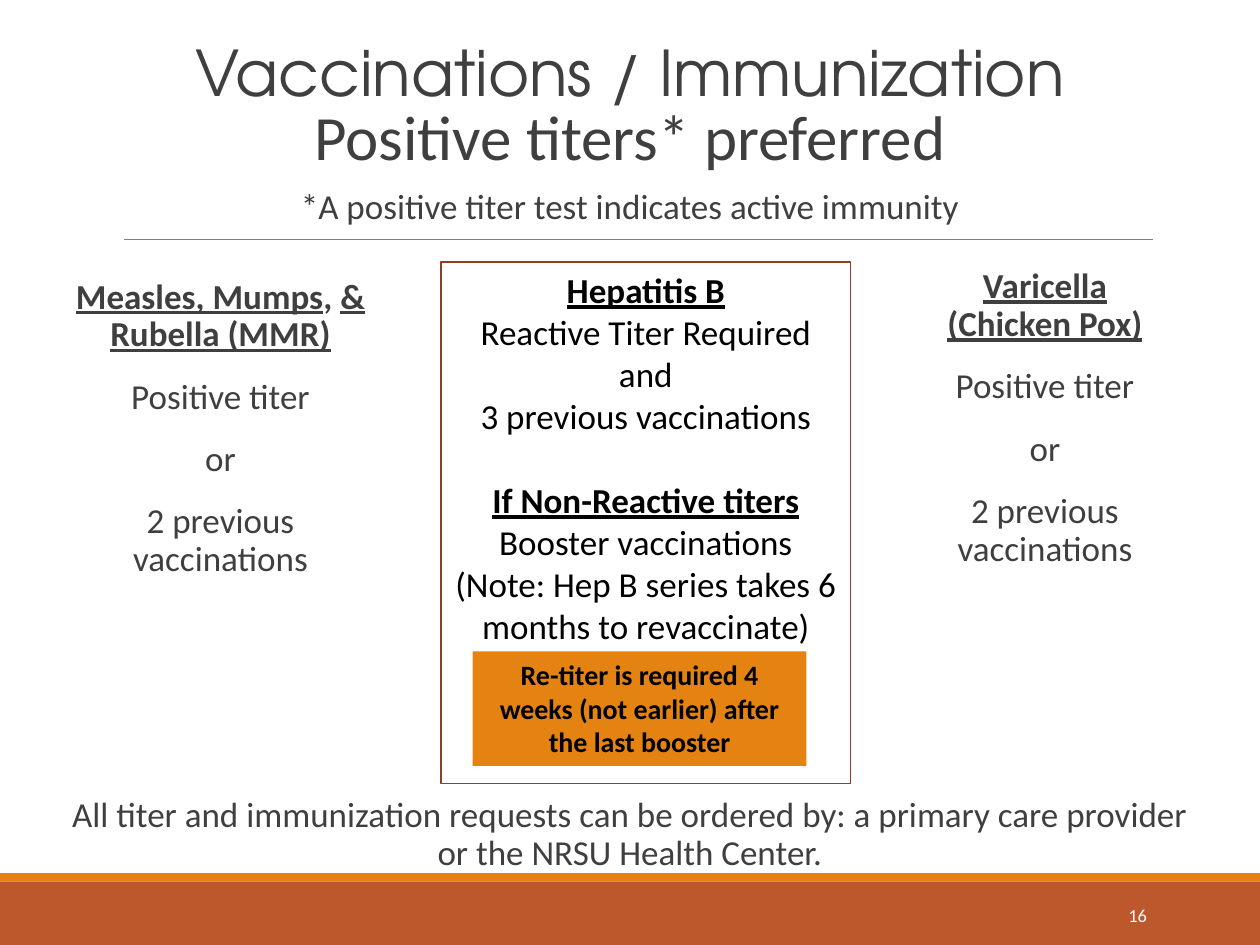
from copy import deepcopy

from lxml import etree
from pptx import Presentation
from pptx.dml.color import RGBColor
from pptx.enum import shapes, text
from pptx.oxml import ns
from pptx.util import Cm, Pt

INK = RGBColor(0x3F, 0x3F, 0x3F)
BLACK = RGBColor(0, 0, 0)
WHITE = RGBColor(0xFF, 0xFF, 0xFF)
RUST = RGBColor(0xBD, 0x58, 0x2C)
ORANGE = RGBColor(0xE4, 0x83, 0x12)
BROWN = RGBColor(0x8D, 0x41, 0x20)
GREY = RGBColor(0x7F, 0x7F, 0x7F)

HEADING = {"bold": True, "underline": True}
PLAIN_INSET, INDENT = 0.25, 0.3
SLIDE_WIDTH, SLIDE_HEIGHT = 25.4, 19.05


def place(shape, box):
    shape.left, shape.top, shape.width, shape.height = (Cm(v) for v in box)
    return shape


def add_run(paragraph, words, font="Calibri", size=20, color=INK,
            bold=False, underline=False):
    """Add words to the paragraph; a newline becomes a line break."""
    for number, line in enumerate(words.split("\n")):
        if number:
            paragraph.add_line_break()
            line_break = paragraph._p[-1]
        run = paragraph.add_run()
        run.text = line
        run.font.name, run.font.size = font, Pt(size)
        run.font.bold, run.font.underline = bold, underline
        run.font.color.rgb = color
        if number:
            line_break.append(deepcopy(run._r.rPr))


def write(shape, paragraphs, align=text.PP_ALIGN.CENTER, spacing=1.0, before=0,
          anchor=text.MSO_ANCHOR.TOP, inset=PLAIN_INSET, indent=0, **style):
    """Fill a shape; each paragraph is a list of (words, style changes)."""
    frame = shape.text_frame
    frame.word_wrap = True
    frame.auto_size = text.MSO_AUTO_SIZE.NONE
    frame.vertical_anchor = anchor
    frame.margin_left = frame.margin_right = Cm(inset)
    frame.margin_top = frame.margin_bottom = Cm(0.13)
    for number, runs in enumerate(paragraphs):
        paragraph = frame.add_paragraph() if number else frame.paragraphs[0]
        paragraph.alignment = align
        paragraph.line_spacing = spacing
        gap = before.get(number, 0) if isinstance(before, dict) else before
        paragraph.space_before = Pt(gap if number else 0)
        paragraph.space_after = Pt(0)
        properties = paragraph._p.get_or_add_pPr()
        properties.set("marL", str(Cm(indent)))
        properties.set("indent", "0")
        etree.SubElement(properties, ns.qn("a:buNone"))
        for words, changes in runs:
            add_run(paragraph, words, **{**style, **changes})


def add_box(slide, box, fill=None, line=None):
    shape = slide.shapes.add_shape(shapes.MSO_SHAPE.RECTANGLE,
                                   *(Cm(v) for v in box))
    shape.shadow.inherit = False
    if fill is None:
        shape.fill.background()
    else:
        shape.fill.solid()
        shape.fill.fore_color.rgb = fill
    if line is None:
        shape.line.fill.background()
    else:
        shape.line.color.rgb, shape.line.width = line, Pt(0.75)
    return shape


def add_note(slide, box, words, **style):
    note = slide.shapes.add_textbox(*(Cm(v) for v in box))
    write(note, [[(words, {})]], **style)


def add_footer(slide, box, number):
    left, top, width, height = box
    stripe = 0.17
    add_box(slide, (left, top + stripe, width, height - stripe), fill=RUST)
    add_box(slide, (left, top, width, stripe), fill=ORANGE)
    add_note(slide, (left + width - 4.77, top + 0.33, 2.74, 1.02), number,
             align=text.PP_ALIGN.RIGHT, anchor=text.MSO_ANCHOR.MIDDLE,
             size=10.5, color=WHITE)


def add_header(slide, box):
    left, top, width, height = box
    write(place(slide.shapes.title, (left + 0.3, top, 22.86, 3.02)),
          [[("Vaccinations / Immunization\n", {"font": "TeX Gyre Adventor"}),
            ("Positive titers* preferred", {})]],
          size=36, spacing=0.85, anchor=text.MSO_ANCHOR.BOTTOM)
    add_note(slide, (left, top + 3.15, width, 1),
             "*A positive titer test indicates active immunity",
             spacing=0.8, inset=0, indent=INDENT)
    bottom = Cm(top + height)
    rule = slide.shapes.add_connector(shapes.MSO_CONNECTOR.STRAIGHT,
                                      Cm(left + 1.52), bottom,
                                      Cm(left + width - 0.89), bottom)
    rule.line.color.rgb, rule.line.width = GREY, Pt(0.75)
    etree.SubElement(rule._element.spPr, ns.qn("a:effectLst"))


def fill_vaccine(placeholder, box, heading):
    """Set one vaccine column: heading, then the accepted proofs."""
    proofs = ["Positive titer", "or", "2 previous vaccinations"]
    write(place(placeholder, box), [heading] + [[(p, {})] for p in proofs],
          spacing=0.9, before=14, inset=0, indent=INDENT)


def add_hepatitis(slide, box):
    left, top, width, height = box
    lines = [("Hepatitis B", HEADING),
             ("Reactive Titer Required", {}),
             ("and", {}),
             ("3 previous vaccinations", {}),
             ("If Non-Reactive titers", HEADING),
             ("Booster vaccinations", {}),
             ("(Note: Hep B series takes 6 months to revaccinate)", {})]
    write(add_box(slide, box, line=BROWN), [[line] for line in lines],
          color=BLACK, before={4: 24})
    retiter = add_box(slide, (left + 0.64, top + 7.85, 6.73, 2.31), fill=ORANGE)
    write(retiter, [[("Re-titer is required 4 weeks (not earlier) "
                      "after the last booster", {})]],
          size=16, color=BLACK, bold=True)


def main():
    deck = Presentation()
    deck.slide_width, deck.slide_height = Cm(SLIDE_WIDTH), Cm(SLIDE_HEIGHT)
    slide = deck.slides.add_slide(deck.slide_layouts[3])
    measles, varicella = list(slide.placeholders)[1:3]

    add_footer(slide, (0, 17.6, SLIDE_WIDTH, SLIDE_HEIGHT - 17.6), "16")
    add_header(slide, (0.97, 0.61, 23.16, 4.22))
    fill_vaccine(measles, (0.97, 5.49, 6.65, 9.96),
                 [("Measles, Mumps", HEADING), (", ", {"bold": True}),
                  ("& Rubella (MMR)", HEADING)])
    fill_vaccine(varicella, (18.11, 5.28, 5.61, 10.46),
                 [("Varicella\n(Chicken Pox)", HEADING)])
    add_hepatitis(slide, (8.89, 5.28, 8.26, 10.52))
    add_note(slide, (0.97, 15.95, 23.16, 2.26),
             "All titer and immunization requests can be ordered by: "
             "a primary care provider or the NRSU Health Center.",
             spacing=0.9, inset=0, indent=INDENT)
    deck.save("out.pptx")


if __name__ == "__main__":
    main()
